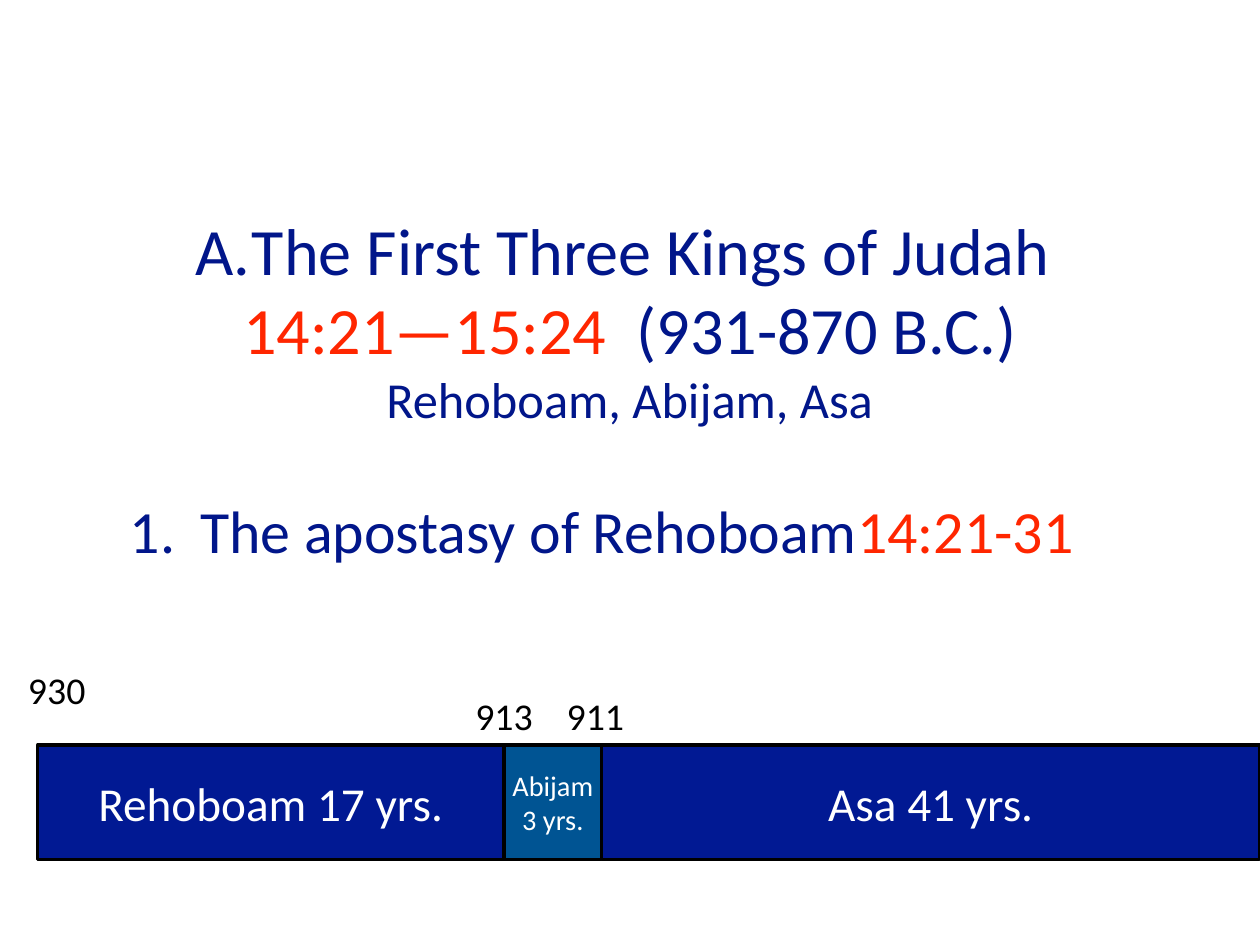
"""Build the slide on the first three kings of Judah with a timeline of their reigns."""
import pptx
import pptx.dml.color
import pptx.enum.shapes
import pptx.enum.text
import pptx.oxml.ns
import pptx.util
from lxml import etree

Pt = pptx.util.Pt
RGB = pptx.dml.color.RGBColor.from_string
ALIGN = pptx.enum.text.PP_ALIGN
ANCHOR = pptx.enum.text.MSO_ANCHOR
NO_FIT = pptx.enum.text.MSO_AUTO_SIZE.NONE
GROW = pptx.enum.text.MSO_AUTO_SIZE.SHAPE_TO_FIT_TEXT
COLORS = {"ink": "01168A", "verse": "FF2600", "reign": "011993",
          "short_reign": "005493", "black": "000000", "white": "FFFFFF"}


def format_frame(frame, margin, **formats):
    sides = ("margin_left", "margin_top", "margin_right", "margin_bottom")
    for name, value in {**dict.fromkeys(sides, Pt(margin)), **formats}.items():
        setattr(frame, name, value)


def write(frame, lines, align, tab=None):
    for index, (size, runs) in enumerate(lines):
        paragraph = frame.add_paragraph() if index else frame.paragraphs[0]
        layout = {"alignment": align, "space_before": Pt(0), "line_spacing": 1.0}
        for name, value in layout.items():
            setattr(paragraph, name, value)
        if tab:
            qn = pptx.oxml.ns.qn
            stops = etree.SubElement(paragraph._p.get_or_add_pPr(), qn("a:tabLst"))
            etree.SubElement(stops, qn("a:tab"), pos=str(Pt(tab)), algn="l")
        for text, color in runs:
            run = paragraph.add_run()
            run.text = text
            for name, value in {"name": "Calibri", "size": Pt(size)}.items():
                setattr(run.font, name, value)
            run.font.color.rgb = RGB(COLORS[color])


deck = pptx.Presentation()
deck.slide_width, deck.slide_height = Pt(800), Pt(600)
slide = deck.slides.add_slide(deck.slide_layouts[0])

heading, point = slide.placeholders
for part, top, height in ((heading, 101, 203), (point, 309, 70)):
    place = {"left": Pt(78), "top": Pt(top), "width": Pt(644), "height": Pt(height)}
    for name, value in place.items():
        setattr(part, name, value)

format_frame(heading.text_frame, 0, vertical_anchor=ANCHOR.MIDDLE,
             word_wrap=True, auto_size=NO_FIT)
write(heading.text_frame, [
    (42, [("A.\tThe First Three Kings of Judah  ", "ink"),
          ("14:21—15:24", "verse"), ("  (931-870 B.C.)", "ink")]),
    (32, [("Rehoboam, Abijam, Asa", "ink")]),
], ALIGN.CENTER, tab=36)

format_frame(point.text_frame, 4.5, vertical_anchor=ANCHOR.TOP,
             word_wrap=True, auto_size=NO_FIT)
write(point.text_frame, [
    (38, [("1.\t The apostasy of Rehoboam", "ink"), ("14:21-31", "verse")]),
], ALIGN.LEFT, tab=36)

reigns = [
    (24, 320, "reign", 30, ["Rehoboam 17 yrs."]),
    (320, 382, "short_reign", 18, ["Abijam", "3 yrs."]),
    (382, 800, "reign", 30, ["Asa 41 yrs."]),
]
for start, end, color, size, lines in reigns:
    reign = slide.shapes.add_shape(pptx.enum.shapes.MSO_SHAPE.RECTANGLE,
                                   Pt(start), Pt(473), Pt(end - start), Pt(73))
    reign.shadow.inherit = False
    reign.fill.solid()
    reign.fill.fore_color.rgb = RGB(COLORS[color])
    reign.line.color.rgb = RGB(COLORS["black"])
    reign.line.width = Pt(2)
    format_frame(reign.text_frame, 3, vertical_anchor=ANCHOR.MIDDLE, word_wrap=True)
    write(reign.text_frame, [(size, [(line, "white")]) for line in lines], ALIGN.CENTER)

for year, center, top in (("930", 36, 421), ("913", 320, 437), ("911", 378, 437)):
    label = slide.shapes.add_textbox(Pt(center - 21.5), Pt(top), Pt(43), Pt(34))
    format_frame(label.text_frame, 3, vertical_anchor=ANCHOR.MIDDLE,
                 word_wrap=False, auto_size=GROW)
    write(label.text_frame, [(24, [(year, "black")])], ALIGN.CENTER)

deck.save("out.pptx")
